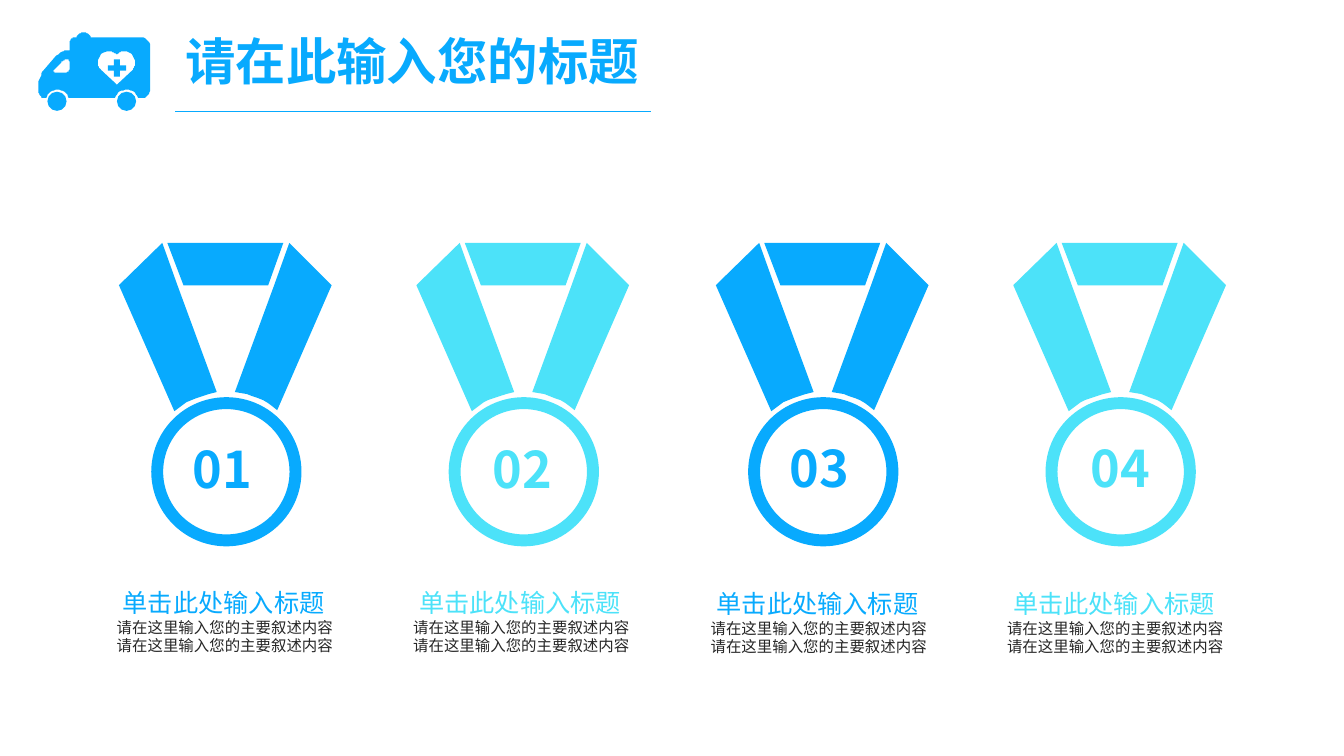
from dataclasses import dataclass

from lxml.etree import SubElement
from pptx import Presentation
from pptx.dml.color import RGBColor
from pptx.enum.shapes import MSO_CONNECTOR, MSO_SHAPE
from pptx.enum.text import MSO_AUTO_SIZE, PP_ALIGN
from pptx.oxml.ns import qn
from pptx.util import Pt


@dataclass(frozen=True)
class Theme:
    blue: str = "08AAFE"
    cyan: str = "4CE2F9"
    white: str = "FFFFFF"
    body: str = "262626"
    font: str = "Noto Sans CJK SC"
    number_font: str = "Noto Sans CJK JP"
    title_size: int = 36
    heading_size: int = 18
    body_size: int = 11


PX = 9144
CURVE_STEPS = 8

RIBBON_TOP = [(48, 0), (163, 0), (148, 42), (64, 42)]
RIBBON_LEFT = [(0, 42), (43, 0), (58, 42), (97, 148), (75, 153, 65, 157, 55, 167)]
RIBBON_RIGHT = [(169, 0), (211, 42), (157, 166), (145, 156, 131, 150, 115, 148), (154, 42)]

VAN_BODY = [
    (140, 37), (90, 37), (89, 34, 86, 32, 83, 32), (80, 32, 77, 34, 76, 37), (73, 37),
    (71, 37, 69, 40, 69, 43), (69, 50), (65, 50), (63, 50, 58, 53, 55, 56), (43, 70),
    (41, 73, 38, 80, 38, 84), (38, 88), (38, 93, 40, 97, 42, 97), (46, 97),
    (47, 92, 52, 89, 57, 89), (62, 89, 67, 92, 68, 97), (114, 97),
    (116, 92, 120, 89, 126, 89), (131, 89, 135, 92, 137, 97), (143, 97),
    (146, 97, 149, 93, 149, 88), (149, 46), (149, 41, 145, 37, 140, 37)]
VAN_WINDOW = [
    (69, 68), (69, 70, 67, 72, 65, 72), (55, 72), (53, 72, 53, 70, 54, 69), (61, 62),
    (62, 60, 65, 59, 67, 59), (68, 59, 69, 61, 69, 63)]
VAN_HEART = [
    (131, 70), (116, 84), (101, 70), (98, 68, 97, 65, 97, 62), (97, 56, 101, 51, 108, 51),
    (111, 51, 114, 52, 116, 54), (118, 52, 120, 51, 124, 51),
    (130, 51, 134, 56, 134, 62), (134, 65, 133, 68, 131, 70)]


def flatten(outline):
    """Turn corners and cubic curves (six numbers) into a list of points."""
    points = []
    for seg in outline:
        if len(seg) == 2:
            points.append(seg)
            continue
        (x0, y0), (x1, y1, x2, y2, x3, y3) = points[-1], seg
        for i in range(1, CURVE_STEPS + 1):
            t = i / CURVE_STEPS
            a, b, c, d = (1 - t) ** 3, 3 * t * (1 - t) ** 2, 3 * t * t * (1 - t), t ** 3
            points.append((a * x0 + b * x1 + c * x2 + d * x3,
                           a * y0 + b * y1 + c * y2 + d * y3))
    return points


class Deck:
    """Holds the theme and the current slide and draws each kind of element."""

    def __init__(self, theme, width, height):
        self.theme = theme
        self.prs = Presentation()
        self.prs.slide_width, self.prs.slide_height = width * PX, height * PX
        self.s = self.prs.slides.add_slide(self.prs.slide_layouts[6])
        self.s.background.fill.solid()
        self.s.background.fill.fore_color.rgb = RGBColor.from_string(theme.white)

    def paint(self, sp, color):
        sp.fill.solid()
        sp.fill.fore_color.rgb = RGBColor.from_string(color)
        sp.line.fill.background()
        sp.shadow.inherit = False
        return sp

    def shape(self, kind, x, y, w, h, color):
        return self.paint(self.s.shapes.add_shape(kind, x * PX, y * PX, w * PX, h * PX), color)

    def outline(self, outlines, color, dx=0, dy=0):
        builder = None
        for outline in outlines:
            start, *rest = [(x + dx, y + dy) for x, y in flatten(outline)]
            if builder is None:
                builder = self.s.shapes.build_freeform(*start, scale=PX)
            else:
                builder.move_to(*start)
            builder.add_line_segments(rest, close=True)
        return self.paint(builder.convert_to_shape(), color)

    def rule(self, x1, y1, x2, y2, color):
        line = self.s.shapes.add_connector(
            MSO_CONNECTOR.STRAIGHT, x1 * PX, y1 * PX, x2 * PX, y2 * PX)
        line.line.color.rgb = RGBColor.from_string(color)
        line.line.width = Pt(0.5)
        SubElement(line._element.spPr, qn("a:effectLst"))

    def text(self, x, y, w, h, lines, wrap=False, align=PP_ALIGN.LEFT):
        tf = self.s.shapes.add_textbox(x * PX, y * PX, w * PX, h * PX).text_frame
        tf.word_wrap = wrap
        tf.auto_size = MSO_AUTO_SIZE.SHAPE_TO_FIT_TEXT
        for i, (words, size, color, font, bold, indent) in enumerate(lines):
            p = tf.add_paragraph() if i else tf.paragraphs[0]
            p.alignment = align
            if indent:
                p._p.get_or_add_pPr().set("marL", str(indent * PX))
            r = p.add_run()
            r.text = words
            p.font.size, p.font.bold, p.font.name = Pt(size), bold, font
            p.font.color.rgb = RGBColor.from_string(color)
            SubElement(r._r.get_or_add_rPr(), qn("a:ea")).set("typeface", font)

    def medal(self, x, number, number_x, number_y, number_w, color):
        t = self.theme
        for ribbon in (RIBBON_TOP, RIBBON_LEFT, RIBBON_RIGHT):
            self.outline([ribbon], color, x, 241)
        ring = self.shape(MSO_SHAPE.DONUT, x + 32, 394, 149, 148, color)
        ring.adjustments[0] = 0.08
        self.text(number_x, number_y, number_w, 71,
                  [(number, t.title_size, color, t.number_font, True, 0)], True, PP_ALIGN.CENTER)

    def caption(self, x, y, color):
        t = self.theme
        detail = ("请在这里输入您的主要叙述内容", t.body_size, t.body, t.font, False, 0)
        heading = ("单击此处输入标题", t.heading_size, color, t.font, False, 6)
        self.text(x, y, 236, 125, [heading, detail, detail])

    def ambulance(self, color):
        self.shape(MSO_SHAPE.CROSS, 107, 59, 18, 17, color).adjustments[0] = 0.35
        for x in (47, 116):
            self.shape(MSO_SHAPE.OVAL, x, 91, 19, 19, color)
        self.outline([VAN_BODY, VAN_WINDOW, VAN_HEART], color)


def main():
    t = Theme()
    deck = Deck(t, 1333, 750)
    deck.text(174, 25, 476, 71,
              [("请在此输入您的标题", t.title_size, t.blue, t.font, True, 0)])
    deck.rule(174, 110, 646, 110, t.blue)
    medals = [(118, 180, 430, 81), (413, 461, 430, 114),
              (710, 756, 429, 114), (1005, 1054, 429, 114)]
    for i, (x, number_x, number_y, number_w) in enumerate(medals):
        color = (t.blue, t.cyan)[i % 2]
        deck.medal(x, f"{i + 1:02}", number_x, number_y, number_w, color)
        deck.caption(106 + round(294.33 * i), 578 + i // 2, color)
    deck.ambulance(t.blue)
    deck.prs.save("out.pptx")


if __name__ == "__main__":
    main()
